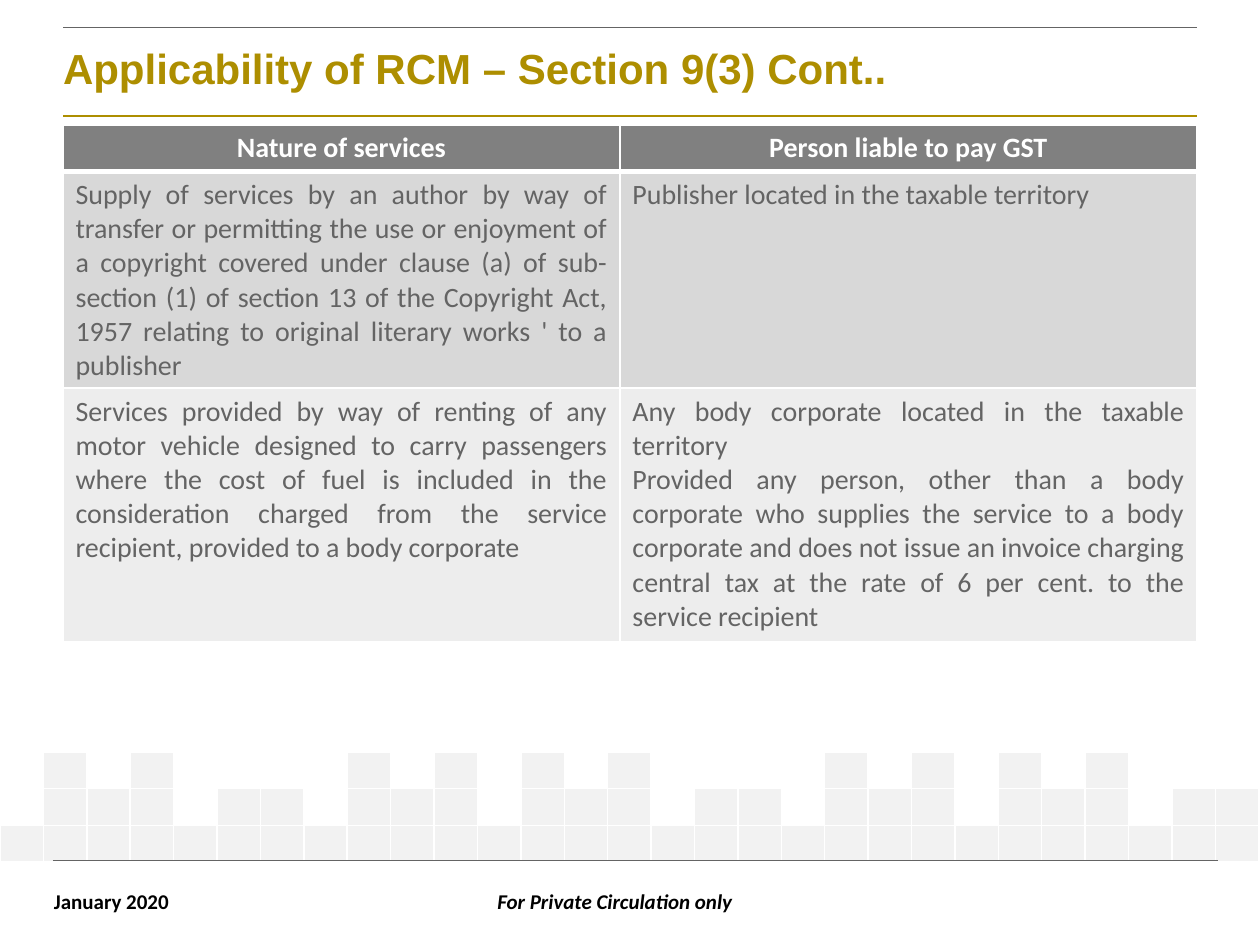
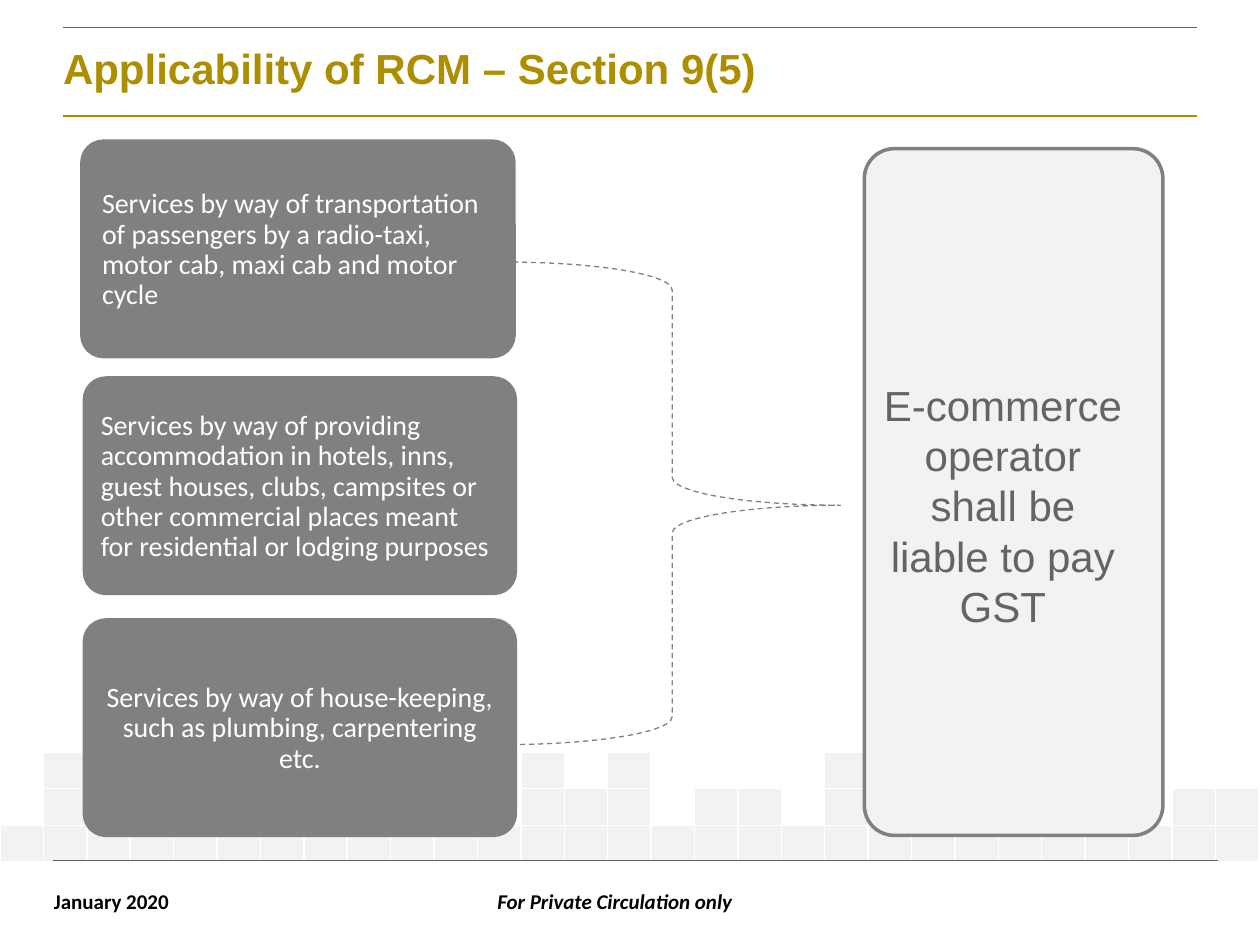
from lxml.etree import SubElement
from pptx import Presentation
from pptx.dml.color import RGBColor
from pptx.enum.dml import MSO_LINE
from pptx.enum.shapes import MSO_CONNECTOR, MSO_SHAPE
from pptx.enum.text import MSO_ANCHOR, MSO_AUTO_SIZE, PP_ALIGN
from pptx.oxml.ns import qn
from pptx.util import Emu, Pt

COLORS = {
    "gold": "AD8E00", "text": "646464", "gray": "808080", "white": "FFFFFF",
    "black": "000000", "tile": "F2F2F2", "band1": "D8D8D8", "band2": "EDEDED",
}
TILE_ROWS = [
    ".X.X....X.X.X.X....X.X.X.X...",
    ".XXX.XX.XXX.XXX.XX.XXX.XXX.XX",
    "X" * 29,
]
LIABILITY_ROWS = [
    [["Nature of services"], ["Person liable to pay GST"]],
    [["Supply of services by an author by way of transfer or permitting the use "
      "or enjoyment of a copyright covered under clause (a) of sub-section (1) of "
      "section 13 of the Copyright Act, 1957 relating to original literary works "
      "' to a publisher"],
     ["Publisher located in the taxable territory"]],
    [["Services provided by way of renting of any motor vehicle designed to carry "
      "passengers where the cost of fuel is included in the consideration charged "
      "from the service recipient, provided to a body corporate"],
     ["Any body corporate located in the taxable territory",
      "Provided any person, other than a body corporate who supplies the service "
      "to a body corporate and does not issue an invoice charging central tax at "
      "the rate of 6 per cent. to the service recipient"]],
]
SERVICES = [
    ((65, 112, 343, 171), (76, 322), PP_ALIGN.LEFT,
     "Services by way of transportation of passengers by a radio-taxi, motor cab, "
     "maxi cab and motor cycle"),
    ((67, 300, 342, 171), (75, 323), PP_ALIGN.LEFT,
     "Services by way of providing accommodation in hotels, inns, guest houses, "
     "clubs, campsites or other commercial places meant for residential or lodging "
     "purposes"),
    ((67, 492, 342, 171), (78, 320), PP_ALIGN.CENTER,
     "Services by way of house-keeping, such as plumbing, carpentering etc."),
]


def px(n):
    """Turn px, 100 to the inch, into EMU."""
    return Emu(n * 9144)


def rgb(name):
    """Look up a named colour."""
    return RGBColor.from_string(COLORS[name])


def write(p, text, size, color, font="Calibri", bold=False, italic=False,
          align=PP_ALIGN.LEFT, spacing=None):
    """Add one formatted run to a paragraph."""
    p.alignment = align
    if spacing:
        p.line_spacing = spacing
    r = p.add_run()
    r.text = text
    r.font.size = Pt(size)
    r.font.name = font
    r.font.bold = bold
    r.font.italic = italic
    r.font.color.rgb = rgb(color)


def set_insets(tf, left, top, right, bottom):
    """Set the four margins of a text frame or cell."""
    tf.margin_left, tf.margin_top = px(left), px(top)
    tf.margin_right, tf.margin_bottom = px(right), px(bottom)


def add_text(s, box, text, size, color, wrap=True, **style):
    """Place a text box holding one run."""
    tf = s.shapes.add_textbox(*map(px, box)).text_frame
    tf.word_wrap = wrap
    tf.auto_size = MSO_AUTO_SIZE.SHAPE_TO_FIT_TEXT
    write(tf.paragraphs[0], text, size, color, **style)


def add_rule(s, x1, x2, y, color, width):
    """Draw a horizontal rule."""
    c = s.shapes.add_connector(MSO_CONNECTOR.STRAIGHT, px(x1), px(y), px(x2), px(y))
    c.line.color.rgb = rgb(color)
    c.line.width = Pt(width)
    SubElement(c._element.spPr, qn("a:effectLst"))


def add_block(s, kind, box, fill, line=None, width=2, adj=()):
    """Place a flat preset shape."""
    sp = s.shapes.add_shape(kind, *map(px, box))
    sp.shadow.inherit = False
    sp.fill.solid()
    sp.fill.fore_color.rgb = rgb(fill)
    for i, value in enumerate(adj):
        sp.adjustments[i] = value
    if line:
        sp.line.color.rgb = rgb(line)
        sp.line.width = Pt(width)
    else:
        sp.line.fill.background()
    return sp


def style_cell(cell, fill, top=1, bottom=1):
    """Give a cell white borders and a fill, or no fill."""
    tcPr = cell._tc.get_or_add_tcPr()
    for side, width in (("L", 1), ("R", 1), ("T", top), ("B", bottom)):
        ln = SubElement(tcPr, qn(f"a:ln{side}"), w=str(int(Pt(width))))
        SubElement(SubElement(ln, qn("a:solidFill")), qn("a:srgbClr"),
                   val=COLORS["white"])
    if fill:
        cell.fill.solid()
        cell.fill.fore_color.rgb = rgb(fill)
    else:
        cell.fill.background()


def add_grid(s, box, widths, heights):
    """Add an unbanded table with the given column widths and row heights."""
    table = s.shapes.add_table(len(heights), len(widths), *map(px, box)).table
    table.first_row = table.horz_banding = False
    for col, width in zip(table.columns, widths):
        col.width = width
    for row, height in zip(table.rows, heights):
        row.height = height
    return table


def add_mosaic(s, box):
    """Build the skyline of tiles above the footer."""
    n_cols, n_rows = len(TILE_ROWS[0]), len(TILE_ROWS)
    table = add_grid(s, box, [px(box[2]) // n_cols] * n_cols,
                     [px(box[3]) // n_rows] * n_rows)
    for i, row in enumerate(TILE_ROWS):
        for j, mark in enumerate(row):
            cell = table.cell(i, j)
            set_insets(cell, 0, 0, 0, 0)
            style_cell(cell, "tile" if mark == "X" else None)
            SubElement(cell.text_frame.paragraphs[0]._p, qn("a:endParaRPr"), sz="800")


def add_frame(prs, title):
    """Start a slide with the shared mosaic, rules, footer and title."""
    s = prs.slides.add_slide(prs.slide_layouts[5])
    add_mosaic(s, (0, 597, 1000, 87))
    add_rule(s, 50, 950, 92, "gold", 1.5)
    add_rule(s, 50, 950, 22, "text", 0.5)
    add_rule(s, 42, 967, 683, "text", 0.25)
    add_text(s, (33, 700, 113, 30), "January 2020", 12, "black", wrap=False, bold=True)
    add_text(s, (242, 700, 492, 30), "For Private Circulation only", 12, "black",
             bold=True, italic=True, align=PP_ALIGN.CENTER)
    sp = s.shapes.title
    sp.left, sp.top, sp.width, sp.height = map(px, (50, 22, 900, 66))
    tf = sp.text_frame
    tf.auto_size = MSO_AUTO_SIZE.NONE
    tf.vertical_anchor = MSO_ANCHOR.MIDDLE
    set_insets(tf, 0, 4, 0, 0)
    write(tf.paragraphs[0], title, 24, "gold", font="Arial", bold=True, spacing=0.85)
    return s


def add_liability_table(s, box):
    """Fill the table of services and the persons liable."""
    widths = [px(442), px(box[2] - 442)]
    table = add_grid(s, box, widths, [px(h) for h in (37, 172, 201)])
    fills = ("gray", "band1", "band2")
    for i, row in enumerate(LIABILITY_ROWS):
        head = i == 0
        for j, paragraphs in enumerate(row):
            cell = table.cell(i, j)
            style_cell(cell, fills[i], top=3 if i == 1 else 1, bottom=3 if head else 1)
            tf = cell.text_frame
            for k, text in enumerate(paragraphs):
                p = tf.add_paragraph() if k else tf.paragraphs[0]
                write(p, text, 16, "white" if head else "text", bold=head,
                      align=PP_ALIGN.CENTER if head else PP_ALIGN.JUSTIFY)


def add_service(s, box, label, align, text):
    """Place a rounded service box with its label inside."""
    add_block(s, MSO_SHAPE.ROUNDED_RECTANGLE, box, "gray", "gray", adj=[0.1])
    x, width = label
    sp = add_block(s, MSO_SHAPE.RECTANGLE, (x, box[1] + 6, width, box[3] - 10), "gray")
    tf = sp.text_frame
    tf.word_wrap = True
    tf.vertical_anchor = MSO_ANCHOR.MIDDLE
    set_insets(tf, 5, 5, 5, 5)
    write(tf.paragraphs[0], text, 16, "white", align=align, spacing=0.9)


def add_operator(s, box):
    """Place the panel naming who pays."""
    x, y, width, _ = box
    add_block(s, MSO_SHAPE.ROUNDED_RECTANGLE, box, "tile", "gray", adj=[0.1])
    add_text(s, (x, y + 178, width - 17, 212),
             "E-commerce operator shall be liable to pay GST", 24, "text",
             font="Arial", align=PP_ALIGN.CENTER)


def build_liability_slide(prs):
    """Build the Section 9(3) slide."""
    s = add_frame(prs, "Applicability of RCM – Section 9(3) Cont..")
    add_liability_table(s, (50, 99, 900, 410))


def build_operator_slide(prs):
    """Build the Section 9(5) slide."""
    s = add_frame(prs, "Applicability of RCM – Section 9(5)")
    brace = add_block(s, MSO_SHAPE.RIGHT_BRACE, (400, 208, 267, 383), "white",
                      "gray", 0.75, adj=[0.083, 0.504])
    brace.line.dash_style = MSO_LINE.DASH
    for service in SERVICES:
        add_service(s, *service)
    add_operator(s, (686, 118, 237, 545))


def main():
    """Build and save the deck."""
    prs = Presentation()
    prs.slide_width, prs.slide_height = px(1000), px(750)
    build_liability_slide(prs)
    build_operator_slide(prs)
    prs.save("out.pptx")


if __name__ == "__main__":
    main()
